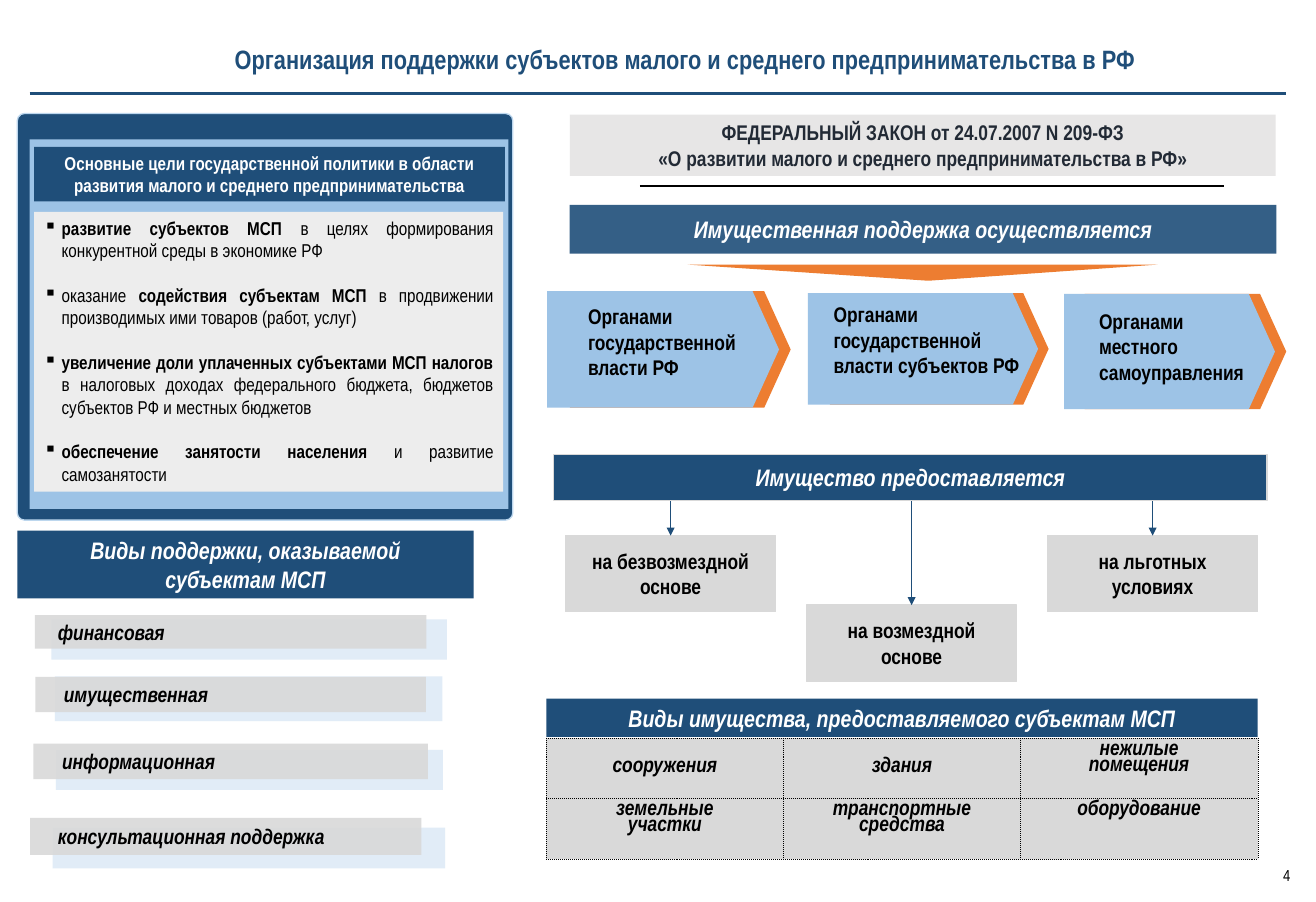
"""Build a slide on how small and medium business is supported in Russia."""
from dataclasses import dataclass

from lxml import etree
from pptx import Presentation
from pptx.dml.color import RGBColor
from pptx.enum.shapes import MSO_CONNECTOR, MSO_SHAPE
from pptx.enum.text import MSO_ANCHOR, PP_ALIGN
from pptx.oxml import parse_xml
from pptx.oxml.ns import nsdecls, qn
from pptx.util import Cm, Pt

RECT, ROUND = MSO_SHAPE.RECTANGLE, MSO_SHAPE.ROUNDED_RECTANGLE
PLATE, WEDGE = MSO_SHAPE.PENTAGON, MSO_SHAPE.ISOSCELES_TRIANGLE
STRAIGHT = MSO_CONNECTOR.STRAIGHT
LEFT, MID, RIGHT, FULL = PP_ALIGN.LEFT, PP_ALIGN.CENTER, PP_ALIGN.RIGHT, PP_ALIGN.JUSTIFY
TOP, CENTRE = MSO_ANCHOR.TOP, MSO_ANCHOR.MIDDLE


@dataclass(frozen=True)
class Theme:
    """Colours, font and type sizes of the slide."""
    navy: str = "1F4E79"
    sky: str = "9DC3E6"
    pale: str = "DEEBF7"
    edge: str = "BDD7EE"
    orange: str = "ED7D31"
    grey: str = "D9D9D9"
    light: str = "EDEDED"
    silver: str = "E7E6E6"
    slate: str = "222A35"
    black: str = "000000"
    white: str = "FFFFFF"
    font: str = "Arial Narrow"
    title: int = 20
    head: int = 18
    body: int = 16
    small: int = 14
    page: int = 12


T = Theme()
deck = Presentation()
deck.slide_width, deck.slide_height = Cm(35), Cm(24)
slide = deck.slides.add_slide(deck.slide_layouts[6])
shapes = slide.shapes


def box(kind, area, fill, line=None, alpha=None, adjust=None):
    """Add a filled preset shape, area being left, top, width, height in cm."""
    shape = shapes.add_shape(kind, *map(Cm, area))
    shape.shadow.inherit = False
    shape.fill.solid()
    shape.fill.fore_color.rgb = RGBColor.from_string(fill)
    if line:
        shape.line.color.rgb = RGBColor.from_string(line)
        shape.line.width = Pt(1)
    else:
        shape.line.fill.background()
    if alpha:
        tint = shape._element.spPr.find(".//" + qn("a:srgbClr"))
        etree.SubElement(tint, qn("a:alpha")).set("val", str(alpha * 1000))
    if adjust is not None:
        shape.adjustments[0] = adjust
    return shape


def write(frame, lines, size, color=T.black, align=MID, bold=True, italic=False, pitch=None):
    """Fill a text frame; a line is a string or a list of (text, bold) runs."""
    frame.word_wrap = True
    for i, line in enumerate(lines):
        para = frame.add_paragraph() if i else frame.paragraphs[0]
        para.alignment = align
        if pitch:
            para.line_spacing = pitch
        for text, strong in [(line, bold)] if isinstance(line, str) else line:
            run = para.add_run()
            run.text = text
            run.font.name, run.font.size = T.font, Pt(size)
            run.font.bold, run.font.italic = strong, italic
            run.font.color.rgb = RGBColor.from_string(color)


title = shapes.add_textbox(Cm(5.99), Cm(1.02), Cm(27.79), Cm(1.12)).text_frame
title.vertical_anchor = CENTRE
write(title, ["Организация поддержки субъектов малого и среднего предпринимательства в РФ"],
      T.title, T.navy, LEFT)

box(ROUND, (0.46, 3.02, 13.18, 10.82), T.navy, T.edge, adjust=0.018)
box(RECT, (0.79, 3.71, 12.73, 9.83), T.sky)
aims = box(RECT, (0.91, 3.91, 12.52, 1.45), T.navy).text_frame
write(aims, ["Основные цели государственной политики в области "
             "развития малого и среднего предпринимательства"], T.small, T.white)

goals = box(RECT, (0.91, 5.64, 12.47, 7.44), T.light).text_frame
goals.vertical_anchor = TOP
write(goals, [
    [("развитие субъектов МСП ", True),
     ("в целях формирования конкурентной среды в экономике РФ", False)],
    [("оказание ", False), ("содействия субъектам МСП", True),
     (" в продвижении производимых ими товаров (работ, услуг)", False)],
    [("увеличение доли уплаченных субъектами МСП налогов ", True),
     ("в налоговых доходах федерального бюджета, бюджетов субъектов РФ "
      "и местных бюджетов", False)],
    [("обеспечение занятости населения ", True), ("и развитие самозанятости", False)],
], T.small, align=FULL)
for i, para in enumerate(goals.paragraphs):
    props = para._p.get_or_add_pPr()
    props.set("marL", str(Cm(0.48)))
    props.set("indent", str(-Cm(0.48)))
    etree.SubElement(props, qn("a:buChar")).set("char", "▪")
    if i:
        para.space_before = Pt(17)

AIDS = [
    ("финансовая", (1.37, 16.48, 10.52, 1.07), (0.93, 16.37, 10.41, 0.89), 0.61),
    ("имущественная", (1.46, 18, 10.31, 1.19), (0.94, 18.01, 10.39, 0.94), 0.76),
    ("информационная", (1.49, 19.95, 10.29, 1.07), (0.89, 19.79, 10.49, 0.94), 0.76),
    ("консультационная поддержка", (1.4, 22.02, 10.44, 1.09), (0.8, 21.76, 10.41, 0.99), 0.74),
]
for name, back, front, inset in AIDS:
    box(RECT, back, T.pale, alpha=90)
    aid = box(RECT, front, T.grey, alpha=90).text_frame
    aid.margin_left, aid.margin_top, aid.margin_bottom = Cm(inset), 0, 0
    write(aid, [name], T.body, align=LEFT, italic=True)

law = box(RECT, (15.16, 3.05, 18.77, 1.63), T.silver).text_frame
write(law, ["ФЕДЕРАЛЬНЫЙ ЗАКОН от 24.07.2007 N 209-ФЗ",
            "«О развитии малого и среднего предпринимательства в РФ»"], T.body, T.slate)

HEADS = [
    ((0.46, 14.12, 12.14, 1.8), ["Виды поддержки, оказываемой", "субъектам МСП"], None, None),
    ((15.15, 5.45, 18.8, 1.3), ["Имущественная поддержка осуществляется"], None, 90),
    ((14.73, 12.09, 18.97, 1.22), ["Имущество предоставляется"], T.grey, None),
    ((14.53, 18.59, 18.92, 1.02), ["Виды имущества, предоставляемого субъектам МСП"], None, None),
]
for area, lines, line, alpha in HEADS:
    head = box(RECT, area, T.navy, line, alpha).text_frame
    write(head, lines, T.head, T.white, italic=True)

box(WEDGE, (18.29, 7.04, 12.5, 0.43), T.orange, adjust=0.488).rotation = 180

BODIES = [
    (14.55, 15.16, 7.75, 6.17, 5.87, 3.1, 15.64, 8.08,
     ["Органами", "государственной", "власти РФ"]),
    (21.49, 22.07, 7.8, 6.12, 5.82, 2.97, 22.17, 8.03,
     ["Органами", "государственной", "власти субъектов РФ"]),
    (28.3, 28.85, 7.82, 5.61, 5.36, 3.07, 29.23, 8.2,
     ["Органами", "местного", "самоуправления"]),
]
for left, tip, top, wide, span, tall, x, y, lines in BODIES:
    box(PLATE, (tip, top, span, tall), T.orange, adjust=0.227)
    box(PLATE, (left, top, wide, tall), T.sky, adjust=0.227)
    body = shapes.add_textbox(Cm(x), Cm(y), Cm(5.3), Cm(2.06)).text_frame
    body.margin_left = body.margin_right = body.margin_top = body.margin_bottom = 0
    write(body, lines, T.body, align=LEFT)

RULES = [
    ((0.79, 2.49, 34.21, 2.49), T.navy, 1.75, False),
    ((17.02, 4.95, 32.54, 4.95), T.black, 1.5, False),
]
TERMS = [("на безвозмездной основе", 14.25), ("на возмездной основе", 16.1),
         ("на льготных условиях", 14.25)]
for i, (name, top) in enumerate(TERMS):
    left = 15.04 + 6.41 * i
    term = box(RECT, (left, top, 5.59, 2.03), T.grey, T.grey)
    write(term.text_frame, [name], T.body)
    mid = left + 5.59 / 2
    RULES.append(((mid, 13.34, mid, top), T.navy, 0.5, True))

for ends, color, width, arrow in RULES:
    rule = shapes.add_connector(STRAIGHT, *map(Cm, ends))
    rule.line.color.rgb = RGBColor.from_string(color)
    rule.line.width = Pt(width)
    if arrow:
        etree.SubElement(rule.line._get_or_add_ln(), qn("a:tailEnd")).set("type", "triangle")
    etree.SubElement(rule._element.spPr, qn("a:effectLst"))

KINDS = [
    [(["сооружения"], CENTRE), (["здания"], CENTRE), (["нежилые", "помещения"], TOP)],
    [(["земельные", "участки"], TOP), (["транспортные", "средства"], TOP),
     (["оборудование"], TOP)],
]
table = shapes.add_table(2, 3, Cm(14.53), Cm(19.63), Cm(18.92), Cm(3.22)).table
table.first_row = table.horz_banding = False
for r, row in enumerate(KINDS):
    table.rows[r].height = Cm(1.61)
    for c, (lines, anchor) in enumerate(row):
        cell = table.cell(r, c)
        for side in "LRTB":
            cell._tc.get_or_add_tcPr().append(parse_xml(
                f'<a:ln{side} {nsdecls("a")} w="3175"><a:solidFill><a:srgbClr val="{T.black}"/>'
                f'</a:solidFill><a:prstDash val="sysDot"/></a:ln{side}>'))
        cell.fill.solid()
        cell.fill.fore_color.rgb = RGBColor.from_string(T.grey)
        cell.vertical_anchor = anchor
        write(cell.text_frame, lines, T.body, italic=True, pitch=0.8)

page = shapes.add_textbox(Cm(32.92), Cm(23.01), Cm(1.65), Cm(0.66)).text_frame
write(page, ["4"], T.page, align=RIGHT, bold=False, pitch=0.8)

deck.save("out.pptx")
